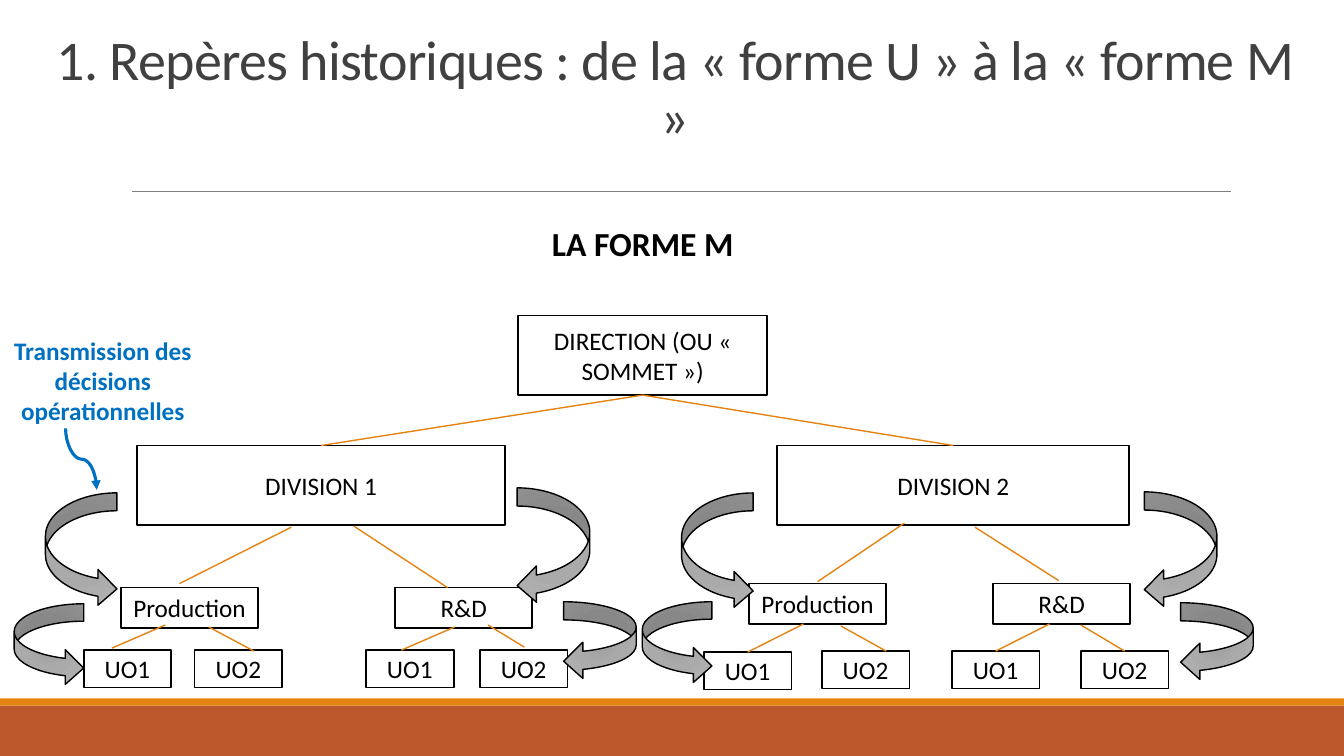
from lxml import etree
from pptx import Presentation
from pptx.dml.color import RGBColor
from pptx.enum import shapes as es, text as et
from pptx.oxml import parse_xml
from pptx.oxml.ns import qn
from pptx.util import Inches, Pt

BLACK = RGBColor(0x00, 0x00, 0x00)
DARK = RGBColor(0x40, 0x40, 0x40)
GREY = RGBColor(0x80, 0x80, 0x80)
ORANGE = RGBColor(0xE4, 0x83, 0x12)
RUST = RGBColor(0xBD, 0x58, 0x2C)
BLUE = RGBColor(0x00, 0x70, 0xC0)
KIND = es.MSO_SHAPE
LINK = es.MSO_CONNECTOR
GRAD = """<a:gradFill xmlns:a="http://schemas.openxmlformats.org/drawingml/2006/main" rotWithShape="1">
<a:gsLst><a:gs pos="0"><a:srgbClr val="9C9C9C"/></a:gs><a:gs pos="45000"><a:srgbClr val="AAAAAA"/></a:gs>
<a:gs pos="100000"><a:srgbClr val="B4B4B4"/></a:gs></a:gsLst>
<a:path path="circle"><a:fillToRect l="100000" t="100000" r="100000" b="100000"/></a:path></a:gradFill>"""

prs = Presentation()
prs.slide_width, prs.slide_height = Inches(13.33), Inches(7.5)
slide = prs.slides.add_slide(prs.slide_layouts[6])
tree = slide.shapes


def write(shape, words, size=18, color=BLACK, bold=False, anchor=et.MSO_ANCHOR.MIDDLE):
    frame = shape.text_frame
    frame.word_wrap = True
    frame.vertical_anchor = anchor
    frame.text = words
    para = frame.paragraphs[0]
    para.alignment = et.PP_ALIGN.CENTER
    font = para.runs[0].font
    font.name, font.size, font.bold = "Calibri", Pt(size), bold
    font.color.rgb = color
    return para


def link(kind, ends, color, width):
    line = tree.add_connector(kind, *[Inches(n) for n in ends])
    line.line.color.rgb = color
    line.line.width = Pt(width)
    etree.SubElement(line._element.spPr, qn("a:effectLst"))
    return line


for top, high, color in [(7, 0.5, RUST), (6.93, 0.07, ORANGE)]:
    band = tree.add_shape(KIND.RECTANGLE, 0, Inches(top), prs.slide_width, Inches(high))
    band.shadow.inherit = False
    band.fill.solid()
    band.fill.fore_color.rgb = color
    band.line.fill.background()
link(LINK.STRAIGHT, (1.31, 1.9, 12.21, 1.9), GREY, 0.5)

title = tree.add_textbox(Inches(0.27), Inches(0.68), Inches(12.85), Inches(0.85))
para = write(title, "1. Repères historiques : de la « forme U » à la « forme M »",
             40, DARK, anchor=et.MSO_ANCHOR.BOTTOM)
para.line_spacing = 0.85
para.runs[0].font._element.set("spc", "-50")

for left, top, wide, high, words, size, color in [
    (5.14, 2.14, 2.47, 0.54, "LA FORME M", 24, BLACK),
    (-0.25, 3.53, 2.54, 0.49, "Transmission des décisions opérationnelles", 18, BLUE),
]:
    label = tree.add_textbox(Inches(left), Inches(top), Inches(wide), Inches(high))
    write(label, words, size, color, True)

boxes = {}
for key, left, top, wide, high, words in [
    ("top", 5.14, 3.13, 2.47, 0.79, "DIRECTION (OU « SOMMET »)"),
    ("div1", 1.36, 4.42, 3.65, 0.79, "DIVISION 1"),
    ("div2", 7.71, 4.42, 3.49, 0.79, "DIVISION 2"),
    ("prod1", 1.2, 5.83, 1.36, 0.4, "Production"),
    ("rd1", 3.92, 5.83, 1.36, 0.4, "R&D"),
    ("prod2", 7.43, 5.79, 1.36, 0.4, "Production"),
    ("rd2", 9.85, 5.79, 1.36, 0.4, "R&D"),
    ("uo1", 0.83, 6.45, 0.87, 0.37, "UO1"),
    ("uo2", 1.93, 6.45, 0.87, 0.37, "UO2"),
    ("uo3", 3.63, 6.45, 0.87, 0.37, "UO1"),
    ("uo4", 4.76, 6.45, 0.87, 0.37, "UO2"),
    ("uo5", 6.98, 6.47, 0.87, 0.37, "UO1"),
    ("uo6", 8.15, 6.46, 0.87, 0.37, "UO2"),
    ("uo7", 9.44, 6.46, 0.87, 0.37, "UO1"),
    ("uo8", 10.72, 6.46, 0.87, 0.37, "UO2"),
]:
    box = tree.add_shape(KIND.RECTANGLE, Inches(left), Inches(top), Inches(wide), Inches(high))
    box.shadow.inherit = False
    box.fill.background()
    box.line.color.rgb = BLACK
    box.line.width = Pt(1.25)
    write(box, words)
    boxes[key] = box

for ends, start, stop in [
    ((6.37, 3.93, 3.18, 4.42), "top", "div1"),
    ((6.37, 3.93, 9.46, 4.42), "top", "div2"),
    ((2.89, 5.23, 1.78, 5.79), None, None),
    ((3.51, 5.22, 4.44, 5.83), None, None),
    ((8.97, 5.19, 8.11, 5.77), None, None),
    ((9.67, 5.23, 10.5, 5.76), None, None),
    ((1.64, 6.2, 1.11, 6.43), None, None),
    ((2.07, 6.22, 2.52, 6.46), None, None),
    ((4.51, 6.22, 3.98, 6.45), None, None),
    ((4.84, 6.2, 5.2, 6.42), None, None),
    ((7.97, 6.19, 7.42, 6.47), None, "uo5"),
    ((8.34, 6.21, 8.79, 6.46), None, None),
    ((10.41, 6.19, 9.88, 6.46), None, "uo7"),
    ((10.72, 6.2, 11.15, 6.46), None, "uo8"),
]:
    branch = link(LINK.STRAIGHT, ends, ORANGE, 1)
    if start:
        branch.begin_connect(boxes[start], 2)
    if stop:
        branch.end_connect(boxes[stop], 0)

for left, top, wide, high, flip in [
    (0.45, 4.89, 0.71, 1.13, False),
    (6.76, 4.89, 0.71, 1.15, False),
    (5.13, 4.84, 0.72, 1.15, True),
    (11.35, 4.88, 0.72, 1.15, True),
    (0.14, 5.99, 0.69, 0.81, False),
    (5.59, 5.97, 0.72, 0.77, True),
    (6.37, 5.97, 0.69, 0.81, False),
    (11.71, 5.98, 0.72, 0.77, True),
]:
    arrow = tree.add_shape(KIND.CURVED_RIGHT_ARROW, Inches(left), Inches(top), Inches(wide), Inches(high))
    arrow.shadow.inherit = False
    arrow.adjustments[2] = 0.265
    arrow.line.color.rgb = BLACK
    arrow.line.width = Pt(1)
    props = arrow._element.spPr
    props.insert(2, parse_xml(GRAD))
    if flip:
        props.find(qn("a:xfrm")).set("flipH", "1")

curve = link(LINK.CURVE, (1.11, 4.4, 0.5, 4.71), BLUE, 2.25)
curve._element.spPr.find(qn("a:xfrm")).set("rot", "16200000")
etree.SubElement(curve.line._get_or_add_ln(), qn("a:tailEnd")).set("type", "triangle")

prs.save("out.pptx")
